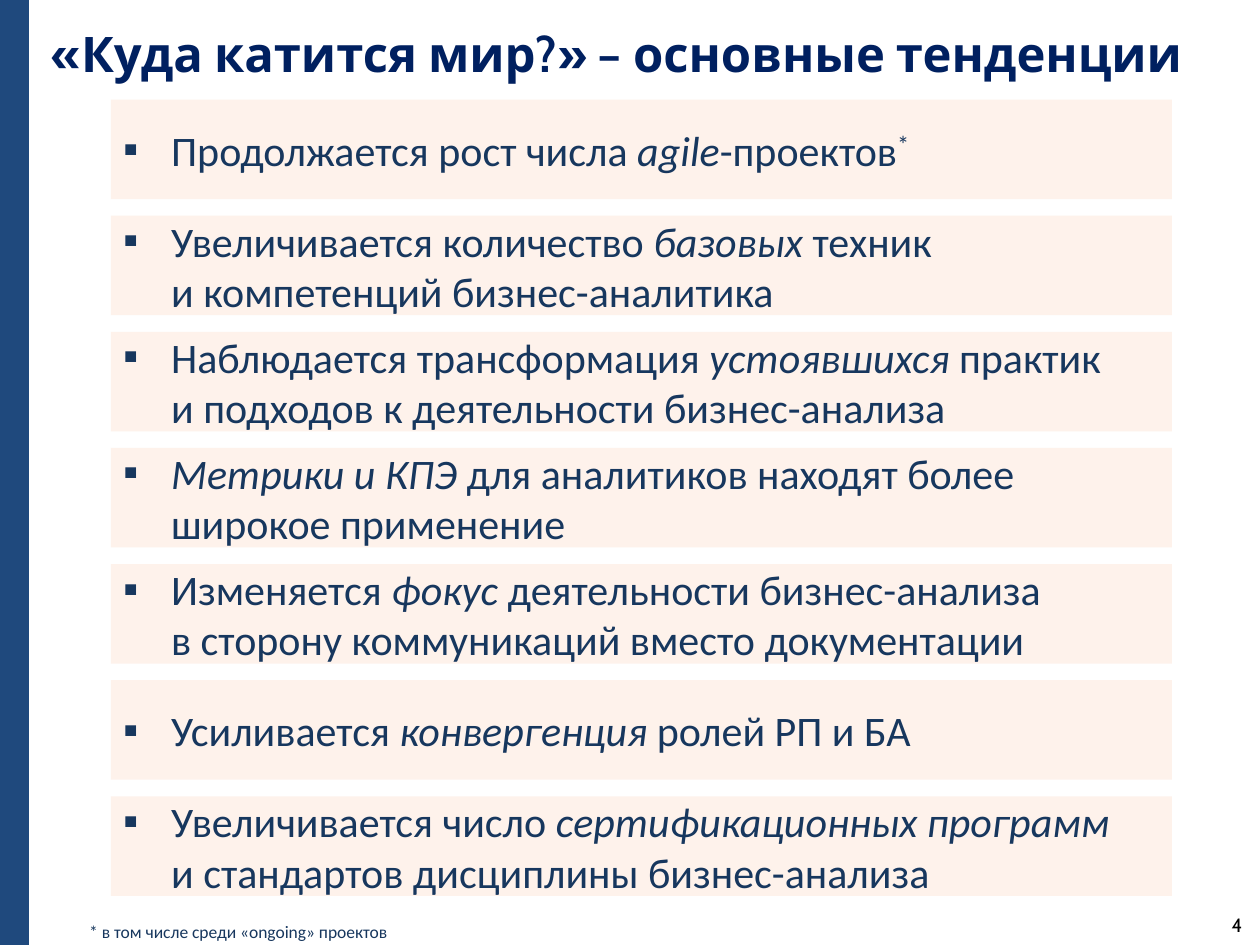
from lxml.etree import SubElement
from pptx import Presentation
from pptx.dml.color import RGBColor
from pptx.enum.shapes import MSO_SHAPE
from pptx.enum.text import MSO_ANCHOR, PP_ALIGN
from pptx.oxml.ns import qn
from pptx.util import Inches, Pt

TRENDS = [
    "Продолжается рост числа _agile_-проектов",
    "Увеличивается количество _базовых _техник \nи компетенций бизнес-аналитика",
    "Наблюдается трансформация _устоявшихся_ практик \nи подходов к деятельности бизнес-анализа",
    "_Метрики и КПЭ _для аналитиков находят более широкое применение",
    "Изменяется _фокус_ деятельности бизнес-анализа \nв сторону коммуникаций вместо документации",
    "Усиливается _конвергенция _ролей РП и БА",
    "Увеличивается число _сертификационных программ_ \nи стандартов дисциплины бизнес-анализа",
]
FIRST_TOP, LAST_TOP = 0.79, 6.32


def rgb(value):
    return RGBColor.from_string(value)


def add_text(p, text, size=24, font="Calibri", color="17375E", bold=False, italic=False, baseline=0):
    for i, line in enumerate(text.split("\n")):
        if i:
            p.add_line_break()
        if not line:
            continue
        r = p.add_run()
        r.text = line
        r.font.size = Pt(size)
        r.font.name = font
        r.font.color.rgb = rgb(color)
        r.font.bold = bold
        r.font.italic = italic
        if baseline:
            r.font._element.set("baseline", str(baseline * 1000))


class Deck:
    font = "Cabin"
    bar_color = "1F497D"
    panel_color = "FDE2D3"
    panel_opacity = 44

    def __init__(self, prs):
        self.s = prs.slides.add_slide(prs.slide_layouts[6])

    def rect(self, x, y, w, h, color, opacity=100):
        sp = self.s.shapes.add_shape(MSO_SHAPE.RECTANGLE, Inches(x), Inches(y), Inches(w), Inches(h))
        sp.shadow.inherit = False
        sp.line.fill.background()
        sp.fill.solid()
        sp.fill.fore_color.rgb = rgb(color)
        if opacity < 100:
            clr = sp.fill._xPr.find(".//" + qn("a:srgbClr"))
            SubElement(clr, qn("a:alpha"), val=str(opacity * 1000))
        return sp

    def label(self, x, y, w, h, text, align=PP_ALIGN.LEFT, inset=True, wrap=True, **fmt):
        tf = self.s.shapes.add_textbox(Inches(x), Inches(y), Inches(w), Inches(h)).text_frame
        tf.word_wrap = wrap
        if not inset:
            tf.margin_left = tf.margin_top = tf.margin_right = tf.margin_bottom = 0
        p = tf.paragraphs[0]
        p.alignment = align
        add_text(p, text, **fmt)

    def trend(self, y, text):
        sp = self.rect(0.88, y, 8.42, 0.79, self.panel_color, self.panel_opacity)
        tf = sp.text_frame
        tf.word_wrap = True
        tf.vertical_anchor = MSO_ANCHOR.MIDDLE
        p = tf.paragraphs[0]
        p.alignment = PP_ALIGN.LEFT
        pPr = p._p.get_or_add_pPr()
        pPr.set("marL", str(Inches(0.38)))
        pPr.set("indent", str(-Inches(0.38)))
        SubElement(pPr, qn("a:buFont"), typeface="Calibri")
        SubElement(pPr, qn("a:buChar"), char="▪")
        for i, part in enumerate(text.split("_")):
            add_text(p, part, italic=i % 2 == 1)
        return p


def main():
    prs = Presentation()
    prs.slide_width, prs.slide_height = Inches(10), Inches(7.5)
    deck = Deck(prs)
    deck.rect(0, 0, 0.23, 7.5, deck.bar_color)
    deck.label(9.1, 7.25, 0.76, 0.28, "4", align=PP_ALIGN.RIGHT, inset=False,
               size=11, font=deck.font, color="000000")
    deck.label(0.31, 0.14, 9.5, 0.96, "«Куда катится мир?» – основные тенденции",
               size=28, font=deck.font, color="002060", bold=True)
    pitch = (LAST_TOP - FIRST_TOP) / (len(TRENDS) - 1)
    paragraphs = [deck.trend(FIRST_TOP + i * pitch, text) for i, text in enumerate(TRENDS)]
    add_text(paragraphs[0], "*", baseline=30)
    deck.label(0.61, 7.26, 2.59, 0.27, "* в том числе среди «ongoing» проектов", wrap=False, size=10)
    prs.save("out.pptx")


if __name__ == "__main__":
    main()
